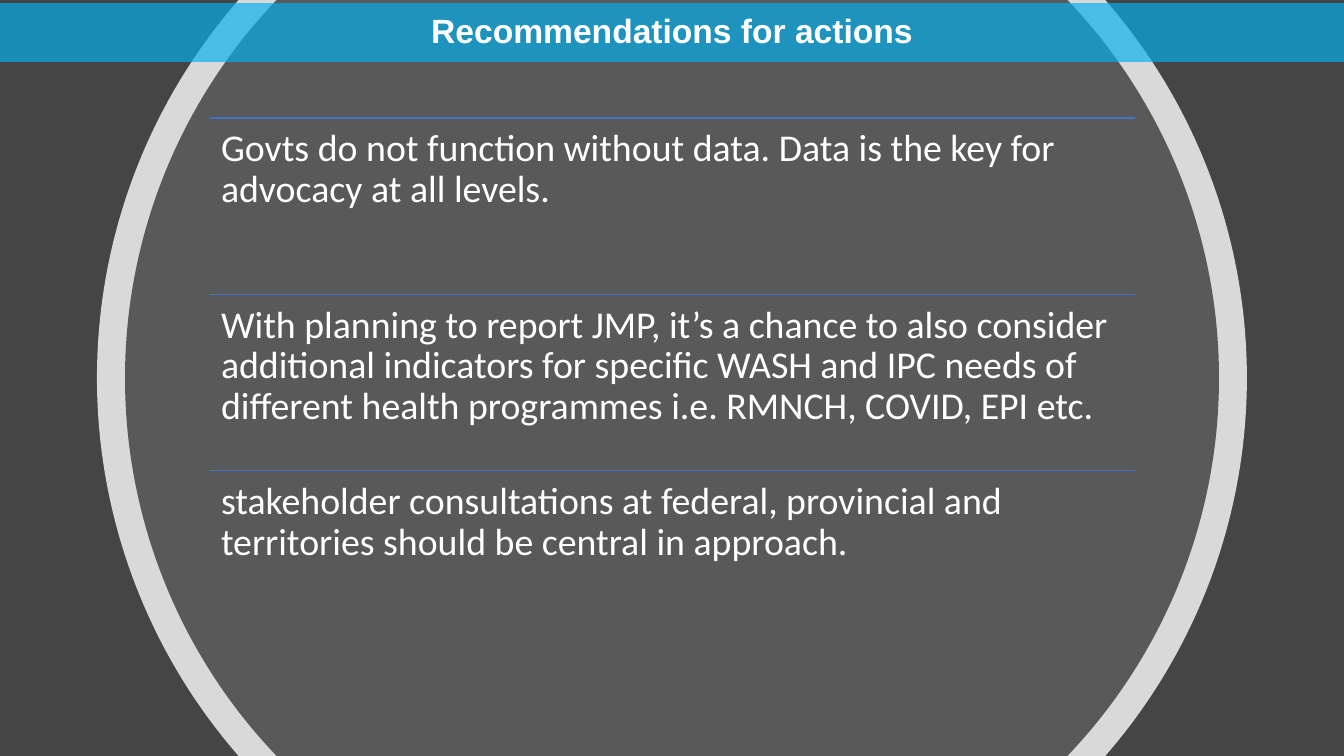
import math
import pptx
import pptx.dml.color
import pptx.enum.shapes
import pptx.enum.text
import pptx.oxml
import pptx.oxml.ns
import pptx.util

WIDTH, HEIGHT = 1344, 756
SCALE = 12192000 / WIDTH
WHITE = "FFFFFF"
POINTS = [
    "Govts do not function without data. Data is the key for advocacy at all levels.",
    "With planning to report JMP, it’s a chance to also consider additional indicators "
    "for specific WASH and IPC needs of different health programmes i.e. RMNCH, COVID, EPI etc.",
    "stakeholder consultations at federal, provincial and territories should be central in approach.",
]


def px(n):
    return round(n * SCALE)


def color(text):
    return pptx.dml.color.RGBColor.from_string(text)


def node(tag, attrs=""):
    return pptx.oxml.parse_xml(f'<a:{tag} {pptx.oxml.ns.nsdecls("a")} {attrs}/>')


def paint(shape, tint, alpha=100):
    shape.shadow.inherit = False
    shape.line.fill.background()
    shape.fill.solid()
    shape.fill.fore_color.rgb = color(tint)
    if alpha < 100:
        tone = shape._element.spPr.find(".//" + pptx.oxml.ns.qn("a:srgbClr"))
        tone.append(node("alpha", f'val="{alpha * 1000}"'))


def write(shape, text, size, face, frame, **style):
    box = shape.text_frame
    for key, value in {"word_wrap": True, **frame}.items():
        setattr(box, key, value)
    para = box.paragraphs[0]
    para.line_spacing = 0.9
    for key, value in style.items():
        setattr(para, key, value)
    run = para.add_run()
    run.text = text
    run.font.size = pptx.util.Pt(size)
    run.font.name = face
    run.font.color.rgb = color(WHITE)
    return run


def bend(shape, first):
    """Turn each three line segments from the given one into a curve."""
    lines = shape._element.findall(".//" + pptx.oxml.ns.qn("a:lnTo"))
    for start in first:
        curve = node("cubicBezTo")
        lines[start].addprevious(curve)
        for line in lines[start:start + 3]:
            curve.append(line[0])
            line.getparent().remove(line)


def disc(slide, radius, tint, alpha=100):
    """Draw a centred circle cut off at the top and bottom of the slide."""
    midx, midy = WIDTH / 2, HEIGHT / 2
    rise = midy / radius
    turn = math.asin(rise)
    run = math.cos(turn)
    pull = 4 / 3 * math.tan(turn / 4)
    arc = [(run, -rise), (run + pull * rise, -rise + pull * run), (1, -pull), (1, 0)]
    arc += [(x, -y) for x, y in reversed(arc[:-1])]
    left = [(-x, -y) for x, y in arc]
    dots = [(px(midx + radius * x), px(midy + radius * y)) for x, y in arc + left]
    path = slide.shapes.build_freeform(*dots[0])
    path.add_line_segments(dots[1:], close=True)
    shape = path.convert_to_shape()
    bend(shape, (0, 3, 7, 10))
    paint(shape, tint, alpha)


def banner(slide, x, y, w, h):
    band = slide.shapes.add_shape(
        pptx.enum.shapes.MSO_SHAPE.RECTANGLE, px(x), px(y), px(w), px(h))
    paint(band, "00B0F0", 67)
    run = write(band, "Recommendations for actions", 24, "Arial",
                {"vertical_anchor": pptx.enum.text.MSO_ANCHOR.MIDDLE},
                alignment=pptx.enum.text.PP_ALIGN.CENTER)
    run.font.bold = True


def rule(slide, x, y, w):
    line = slide.shapes.add_connector(
        pptx.enum.shapes.MSO_CONNECTOR.STRAIGHT, px(x), px(y), px(x + w), px(y))
    line.line.color.rgb = color("4472C4")
    line.line.width = pptx.util.Pt(1)
    line._element.spPr.append(node("effectLst"))


def advice(slide, x, y, w, h):
    """Stack the points in equal rows, each under a rule."""
    step = h / len(POINTS)
    pad = {f"margin_{side}": px(11) for side in ("left", "top", "right", "bottom")}
    for i, text in enumerate(POINTS):
        top = y + i * step
        rule(slide, x, top, w)
        box = slide.shapes.add_textbox(px(x), px(top), px(w), px(step))
        write(box, text, 27, "Calibri", pad, space_after=pptx.util.Pt(9))


def main():
    deck = pptx.Presentation()
    deck.slide_width, deck.slide_height = px(WIDTH), px(HEIGHT)
    slide = deck.slides.add_slide(deck.slide_layouts[6])
    back = slide.background.fill
    back.solid()
    back.fore_color.rgb = color("454545")
    disc(slide, 575, WHITE, 80)
    disc(slide, 547, "595959")
    banner(slide, 0, 3, WIDTH, 59)
    advice(slide, 210, 118, 925, 529)
    deck.save("out.pptx")


if __name__ == "__main__":
    main()
